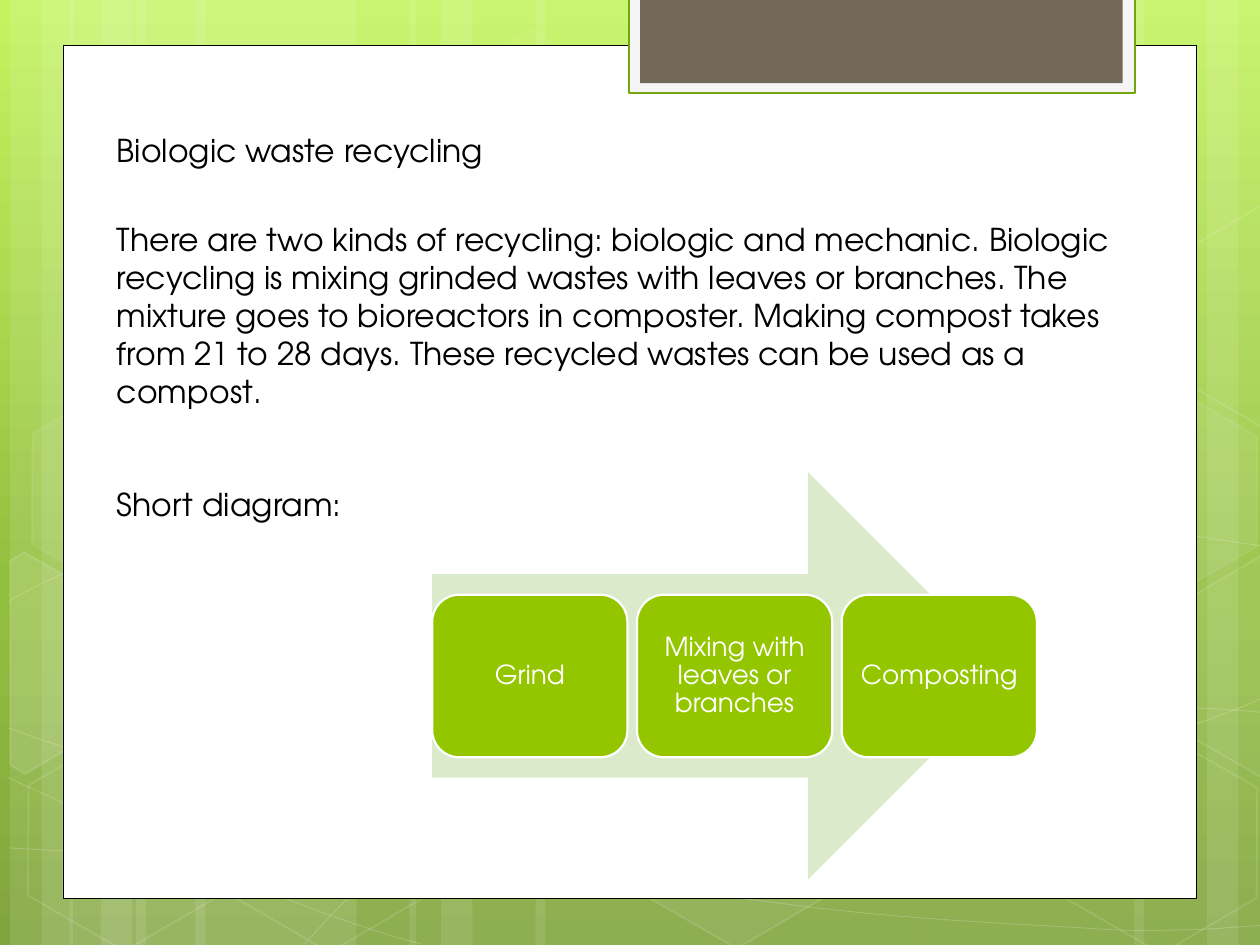
from math import cos, radians, sin
from lxml.etree import SubElement
from pptx import Presentation
from pptx.dml.color import RGBColor
from pptx.enum.shapes import MSO_SHAPE
from pptx.enum.text import MSO_ANCHOR, MSO_AUTO_SIZE, PP_ALIGN
from pptx.oxml.ns import qn
from pptx.util import Inches, Pt

COLUMNS, ROWS, CELL = 10, 7.5, Inches(1)
FONT = "TeX Gyre Adventor"
TILT = 30
COLORS = {
    "white": "FFFFFF", "black": "000000", "lime": "C3F35F", "grass": "93BF3F",
    "moss": "81A53E", "tab": "F5F5F5", "tab edge": "74A510", "taupe": "71685A",
    "arrow": "DCEACC", "step": "94C600",
}
SKY = [(0, "lime"), (62, "grass"), (100, "moss")]
BANDS = [
    (1.08, 1.75), (0.08, 0.5), (0.33, 0.83), (1.55, 1.75), (0.55, 0.5), (0.8, 0.83),
    (7.33, 1.75), (9.58, 0.5), (9, 0.83), (4.25, 3.08), (3.25, 0.5), (3.5, 0.83),
]
CURVES = [
    [(0.07, 6.73), (0.61, 6.76), (1.15, 6.79), (1.9, 6.78), (2.65, 6.77), (3.58, 6.75),
     (4.58, 6.65), (5.58, 6.55), (7, 6.36), (7.92, 6.17), (8.83, 5.98), (9.77, 5.68),
     (10.07, 5.51)],
    [(0.07, 4.77), (0.36, 4.61), (0.65, 4.46), (1.21, 4.31), (1.78, 4.16), (2.59, 3.94),
     (3.47, 3.87), (4.36, 3.8), (5.44, 3.79), (6.54, 3.87), (7.64, 3.95), (9.47, 4.26),
     (10.07, 4.34)],
    [(0.06, 6.17), (1.27, 6.72), (2.47, 7.27), (3.34, 7.49)],
    [(0.07, 5.78), (0.38, 5.89), (0.7, 6), (1.28, 6.16), (1.86, 6.31), (2.73, 6.56),
     (3.57, 6.73), (4.4, 6.9), (5.45, 7.08), (6.28, 7.18), (7.11, 7.29), (8, 7.33),
     (8.53, 7.36), (9.05, 7.4), (9.19, 7.38), (9.45, 7.38), (9.71, 7.37), (9.89, 7.35),
     (10.07, 7.34)],
    [(2.42, 7.49), (2.6, 7.29), (2.78, 7.09), (3.02, 6.91), (3.26, 6.73), (3.6, 6.53),
     (3.88, 6.39), (4.16, 6.25), (4.33, 6.19), (4.7, 6.09), (5.06, 5.99), (5.73, 5.85),
     (6.08, 5.78), (6.44, 5.71), (6.49, 5.71), (6.8, 5.69), (7.11, 5.66), (7.6, 5.63),
     (7.94, 5.62), (8.29, 5.61), (8.86, 5.62), (8.86, 5.62), (8.86, 5.62), (9.53, 5.62),
     (9.53, 5.62), (9.71, 5.63), (9.88, 5.64), (9.97, 5.65), (10.06, 5.66), (10.03, 5.65),
     (10.06, 5.66)],
]
HEXAGONS = [
    (3.34, 0.36, 4, 8), (4.97, 5.89, 6, 12), (0.11, 5.91, 0, 12),
    (0.14, 3.12, 7, 8), (1.74, 5.92, 0, 12), (7.53, 4.53, 10, 12),
    (8.34, 5.93, 0, 12), (8.34, 3.14, 7, 8),
]
CUT_HEXAGONS = [
    ((0.36, 5.35), 10,
     [(0.08, 4.45), (0.19, 4.38), (0.96, 4.82), (0.95, 5.7), (0.2, 6.14), (0.08, 6.07)]),
    ((9.85, 5.2), 4,
     [(9.26, 4.85), (10.01, 4.41), (10.09, 4.46), (10.09, 6.13), (10.02, 6.17), (9.26, 5.73)]),
    ((9.85, 2.41), 0,
     [(9.26, 2.07), (10.01, 1.63), (10.1, 1.68), (10.09, 3.35), (10.02, 3.39), (9.26, 2.95)]),
]
TITLE = "Biologic waste recycling"
BODY = (
    "There are two kinds of recycling: biologic and mechanic. Biologic recycling is "
    "mixing grinded wastes with leaves or branches. The mixture goes to bioreactors in "
    "composter. Making compost takes from 21 to 28 days. These recycled wastes can be "
    "used as a compost."
)
STEPS = ["Grind", "Mixing with leaves or branches", "Composting"]


def cells(*counts):
    """Turn counts of grid cells into lengths."""
    return [round(count * CELL) for count in counts]


def color(name):
    """Look up a named colour."""
    return RGBColor.from_string(COLORS[name])


def set_opacity(holder, percent):
    """Make the solid colour inside a fill or line element see-through."""
    tone = holder.find(qn("a:solidFill")).find(qn("a:srgbClr"))
    SubElement(tone, qn("a:alpha")).set("val", str(percent * 1000))


def paint(shape, fill=None, edge=None, width=1, fill_opacity=100, edge_opacity=100):
    """Set fill, outline and opacity of a shape."""
    shape.shadow.inherit = False
    properties = shape._element.spPr
    if fill and fill_opacity:
        shape.fill.solid()
        shape.fill.fore_color.rgb = color(fill)
        if fill_opacity < 100:
            set_opacity(properties, fill_opacity)
    else:
        shape.fill.background()
    if edge:
        shape.line.color.rgb = color(edge)
        shape.line.width = Pt(width)
        if edge_opacity < 100:
            set_opacity(properties.find(qn("a:ln")), edge_opacity)
    else:
        shape.line.fill.background()


def add_block(page, kind, place, **look):
    """Add a painted preset shape."""
    shape = page.shapes.add_shape(kind, *cells(*place))
    paint(shape, **look)
    return shape


def add_outline(page, points, close, **look):
    """Add a painted freeform through the points."""
    start, *rest = [cells(*point) for point in points]
    builder = page.shapes.build_freeform(*start)
    builder.add_line_segments(rest, close=close)
    shape = builder.convert_to_shape()
    paint(shape, **look)
    return shape


def add_curve(page, points):
    """Add a faint line whose points act as cubic controls."""
    shape = add_outline(page, points, False, edge="white", width=0.5, edge_opacity=20)
    track = next(shape._element.iter(qn("a:path")))
    lines = track.findall(qn("a:lnTo"))
    for first in range(0, len(lines), 3):
        cubic = SubElement(track, qn("a:cubicBezTo"))
        for line in lines[first:first + 3]:
            cubic.append(line[0])
            track.remove(line)


def untilt(point, center):
    """Turn a point back by the tilt around a center."""
    across, down = point[0] - center[0], point[1] - center[1]
    cosine, sine = cos(radians(TILT)), sin(radians(TILT))
    return center[0] + across * cosine + down * sine, center[1] - across * sine + down * cosine


def write(frame, paragraphs, size, tone):
    """Write formatted paragraphs into a text frame."""
    frame.word_wrap = True
    frame.text = "\n".join(paragraphs)
    for para in frame.paragraphs:
        for span in para.runs:
            span.font.name = FONT
            span.font.size = Pt(size)
            span.font.color.rgb = color(tone)


def add_text(page, place, paragraphs):
    """Add a text box for running text."""
    frame = page.shapes.add_textbox(*cells(*place)).text_frame
    write(frame, paragraphs, 18, "black")
    frame.auto_size = MSO_AUTO_SIZE.SHAPE_TO_FIT_TEXT
    return frame


def add_step(page, place, label):
    """Add one rounded step of the process."""
    box = add_block(page, MSO_SHAPE.ROUNDED_RECTANGLE, place, fill="step", edge="white", width=1.25)
    frame = box.text_frame
    write(frame, [label], 15, "white")
    frame.vertical_anchor = MSO_ANCHOR.MIDDLE
    frame.margin_left = frame.margin_right = frame.margin_top = frame.margin_bottom = Inches(0.06)
    frame.paragraphs[0].alignment = PP_ALIGN.CENTER
    frame.paragraphs[0].line_spacing = 0.9


def set_background(page):
    """Fill the page with a vertical gradient."""
    fill = page.background.fill
    fill.gradient()
    fill.gradient_angle = 270
    stops = next(page._element.iter(qn("a:gsLst")))
    for stop in list(stops):
        stops.remove(stop)
    for position, name in SKY:
        stop = SubElement(stops, qn("a:gs"))
        stop.set("pos", str(position * 1000))
        SubElement(stop, qn("a:srgbClr")).set("val", COLORS[name])


def add_scenery(page):
    """Add the bands, curves and hexagons behind the panel."""
    for left, width in BANDS:
        add_block(page, MSO_SHAPE.RECTANGLE, (left, 0, width, ROWS), fill="white", fill_opacity=10)
    for points in CURVES:
        add_curve(page, points)
    for left, top, fill_opacity, edge_opacity in HEXAGONS:
        hexagon = add_block(page, MSO_SHAPE.HEXAGON, (left, top, 1.75, 1.52), fill="white",
                            edge="white", fill_opacity=fill_opacity, edge_opacity=edge_opacity)
        hexagon.adjustments[0] = 0.285
        hexagon.rotation = TILT
    for center, fill_opacity, points in CUT_HEXAGONS:
        corners = [untilt(point, center) for point in points]
        piece = add_outline(page, corners, True, fill="white", edge="white",
                            fill_opacity=fill_opacity, edge_opacity=12)
        piece.rotation = TILT


def main():
    """Build the slide and save it."""
    deck = Presentation()
    deck.slide_width, deck.slide_height = cells(COLUMNS, ROWS)
    page = deck.slides.add_slide(deck.slide_layouts[6])
    set_background(page)
    add_scenery(page)
    add_block(page, MSO_SHAPE.RECTANGLE, (0.5, 0.36, 9, 6.77), fill="white", edge="black", width=0.5)
    add_block(page, MSO_SHAPE.RECTANGLE, (4.99, -0.02, 4.02, 0.76), fill="tab", edge="tab edge", width=1.25)
    add_block(page, MSO_SHAPE.RECTANGLE, (5.08, -0.02, 3.83, 0.68), fill="taupe")
    add_text(page, (0.83, 0.99, 4.33, 0.4), [TITLE])
    body = add_text(page, (0.83, 1.7, 8.35, 2.52), [BODY, "Short diagram:"])
    body.paragraphs[1].space_before = Pt(43)
    add_block(page, MSO_SHAPE.RIGHT_ARROW, (3.43, 3.75, 4.6, 3.23), fill="arrow")
    for index, label in enumerate(STEPS):
        add_step(page, (3.43 + 1.625 * index, 4.72, 1.55, 1.29), label)
    deck.save("out.pptx")


if __name__ == "__main__":
    main()
